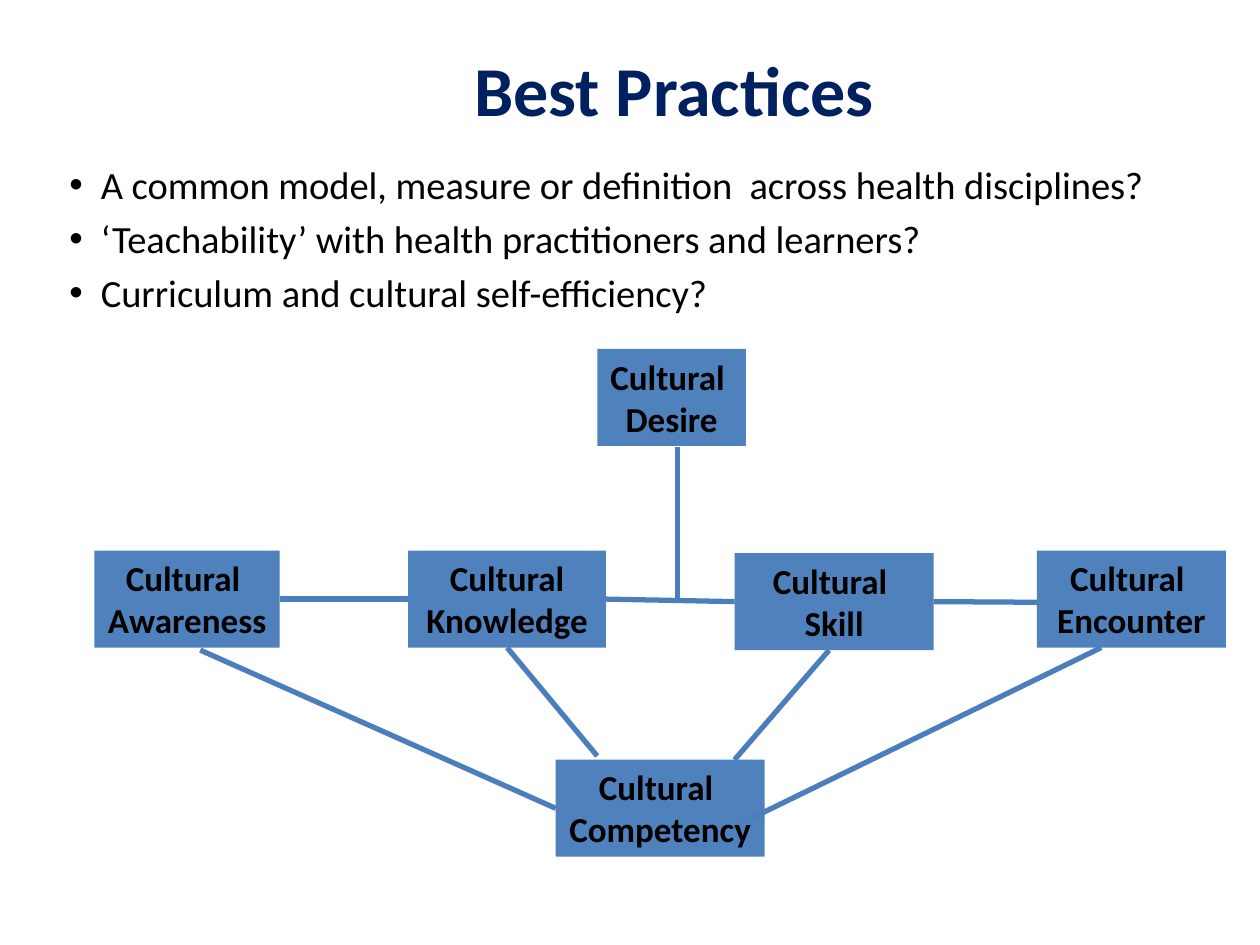
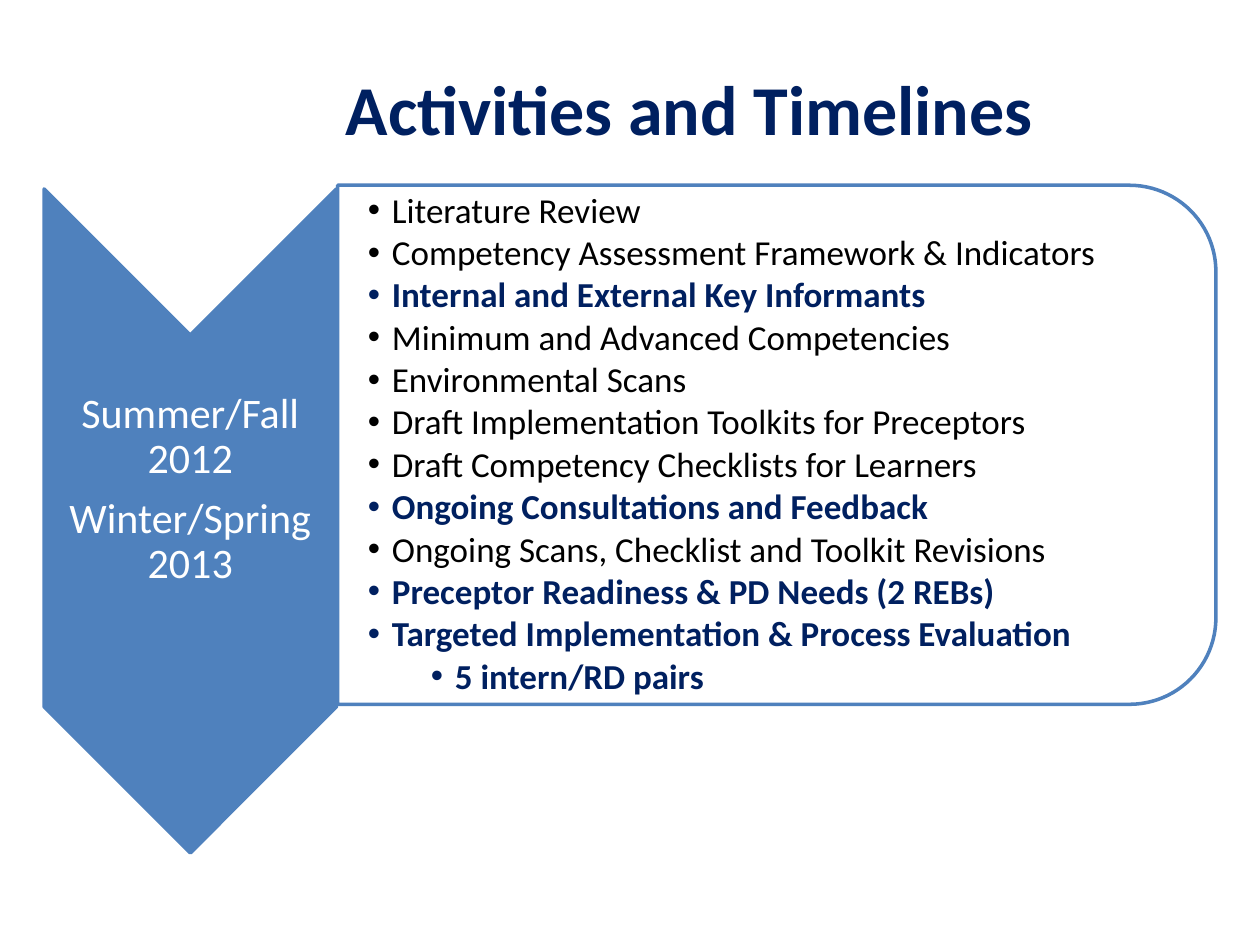
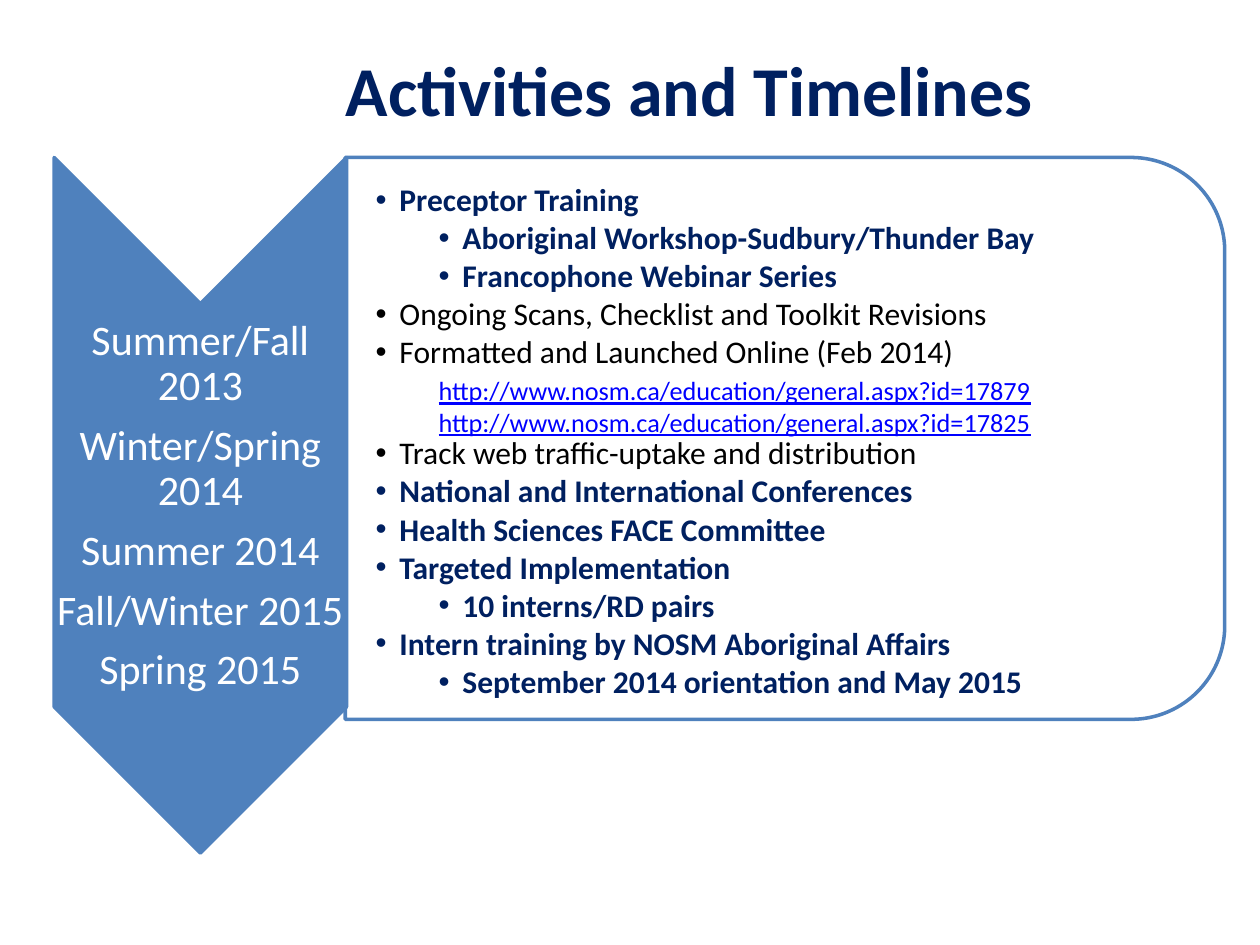
from dataclasses import dataclass

from pptx import Presentation
from pptx import util as u
from pptx.dml.color import RGBColor
from pptx.enum import shapes, text
from pptx.oxml.ns import qn
from lxml import etree

PX = 9144  # EMU in one px, 100 px to the inch


@dataclass(frozen=True)
class Theme:
    font: str = "Calibri"
    navy: str = "002060"
    black: str = "000000"
    white: str = "FFFFFF"
    blue: str = "4F81BD"
    line: str = "4B7EBC"
    link: str = "0000FF"
    title_size: int = 40
    arrow_size: int = 24
    question_size: int = 22
    box_size: int = 20
    link_size: int = 15


T = Theme()

# Looks of list items: font format, and text indent in px (no hang means no bullet)
ITEM_LOOKS = {
    "plain": (dict(color=T.black), 19, 19),
    "key": (dict(color=T.navy, bold=True), 19, 19),
    "sub": (dict(color=T.navy, bold=True), 69, 19),
    "link": (dict(color=T.link, underline=True, size=T.link_size), 50, 0),
    "question": (dict(color=T.black), 25, 25),
}


def emu(*lengths):
    return [round(n * PX) for n in lengths]


def set_all(target, formats):
    for name, value in formats.items():
        setattr(target, name, value)


class Deck:
    def __init__(self):
        self.prs = Presentation()
        self.prs.slide_width, self.prs.slide_height = emu(1000, 750)
        self.s = None

    def slide(self, title, at):
        self.s = self.prs.slides.add_slide(self.prs.slide_layouts[1])
        sp = self.s.shapes.title
        self.place(sp, at)
        self.frame(sp, anchor=text.MSO_ANCHOR.MIDDLE)
        self.fill_in(sp.text_frame.paragraphs[0], title,
                     dict(size=T.title_size, color=T.navy, bold=True),
                     alignment=text.PP_ALIGN.CENTER)

    def place(self, sp, at):
        sp.left, sp.top, sp.width, sp.height = emu(*at)

    def frame(self, sp, insets=(10, 5, 10, 5), anchor=text.MSO_ANCHOR.TOP, wrap=True):
        tf = sp.text_frame
        sides = ("margin_left", "margin_top", "margin_right", "margin_bottom")
        set_all(tf, dict(zip(sides, emu(*insets))))
        set_all(tf, dict(word_wrap=wrap, vertical_anchor=anchor,
                         auto_size=text.MSO_AUTO_SIZE.NONE))
        return tf

    def fill_in(self, p, words, font, **layout):
        set_all(p, layout)
        r = p.add_run()
        r.text = words
        font = {"name": T.font, "bold": False, **font}
        r.font.color.rgb = RGBColor.from_string(font.pop("color"))
        font["size"] = u.Pt(font["size"])
        set_all(r.font, font)

    def paragraphs(self, tf, count):
        return [tf.paragraphs[0]] + [tf.add_paragraph() for _ in range(count - 1)]

    def bullets(self, items, at, size, leading=1.0, before=0, after=0, **frame):
        sp = self.s.placeholders[1]
        self.place(sp, at)
        tf = self.frame(sp, **frame)
        for i, (p, (look, words)) in enumerate(zip(self.paragraphs(tf, len(items)), items)):
            font, indent, hang = ITEM_LOOKS[look]
            pPr = p._p.get_or_add_pPr()
            pPr.set("marL", str(indent * PX))
            pPr.set("indent", str(-hang * PX))
            if hang:
                etree.SubElement(pPr, qn("a:buChar"), char="•")
            else:
                etree.SubElement(pPr, qn("a:buNone"))
            self.fill_in(p, words, {"size": size, **font},
                         line_spacing=leading if hang else 1.0,
                         space_before=u.Pt(before if i else 0),
                         space_after=u.Pt(after if hang else 0))
        self.s.shapes._spTree.append(sp._element)  # bring in front of the panel

    def shape(self, kind, at, fill, line=None):
        sp = self.s.shapes.add_shape(kind, *emu(*at))
        sp.shadow.inherit = False
        sp.fill.solid()
        sp.fill.fore_color.rgb = RGBColor.from_string(fill)
        if line:
            sp.line.color.rgb = RGBColor.from_string(line)
            sp.line.width = u.Pt(2)
        else:
            sp.line.fill.background()
        return sp

    def turned(self, kind, at, fill):
        """Shape turned a quarter clockwise that fills the given area."""
        x, y, w, h = at
        sp = self.shape(kind, (x + (w - h) / 2, y + (h - w) / 2, h, w), fill, T.blue)
        sp.rotation = 90
        return sp

    def box(self, lines, at):
        sp = self.shape(shapes.MSO_SHAPE.RECTANGLE, at, T.blue)
        tf = self.frame(sp, wrap=len(lines) == 1)
        for p, words in zip(self.paragraphs(tf, len(lines)), lines):
            self.fill_in(p, words, dict(size=T.box_size, color=T.black, bold=True),
                         alignment=text.PP_ALIGN.CENTER)
        return sp

    def connect(self, start, end):
        """Each end is an (x, y) point or a (shape, side) pair."""
        points = [tip if isinstance(tip[0], int) else (0, 0) for tip in (start, end)]
        cn = self.s.shapes.add_connector(shapes.MSO_CONNECTOR.STRAIGHT,
                                         *emu(*points[0], *points[1]))
        for join, tip in ((cn.begin_connect, start), (cn.end_connect, end)):
            if not isinstance(tip[0], int):
                join(*tip)
        cn.line.color.rgb = RGBColor.from_string(T.line)
        cn.line.width = u.Pt(3)
        etree.SubElement(cn._element.spPr, qn("a:effectLst"))

    def caption(self, lines, at):
        tf = self.frame(self.s.shapes.add_textbox(*emu(*at)), (2, 2, 2, 2),
                        text.MSO_ANCHOR.MIDDLE)
        for p, words in zip(self.paragraphs(tf, len(lines)), lines):
            self.fill_in(p, words, dict(size=T.arrow_size, color=T.white),
                         alignment=text.PP_ALIGN.CENTER, line_spacing=0.9,
                         space_after=u.Pt(8.2))

    def timeline(self, title_at, panel, list_top, items, size, arrow, periods, periods_at):
        self.slide("Activities and Timelines", title_at)
        # Panel with its list
        sp = self.turned(shapes.MSO_SHAPE.ROUND_2_SAME_RECTANGLE, panel, T.white)
        colour = sp._element.spPr.find(qn("a:solidFill"))[0]
        etree.SubElement(colour, qn("a:alpha"), val="90000")
        x, _, _, h = panel
        self.bullets(items, (x + 10, list_top, 684, h), size, leading=0.9,
                     after=round(size * 0.13, 1), insets=(14, 1, 1, 1),
                     anchor=text.MSO_ANCHOR.MIDDLE)
        # Arrow with its periods
        self.turned(shapes.MSO_SHAPE.CHEVRON, arrow, T.blue)
        self.caption(periods, (arrow[0], periods_at[0], arrow[2], periods_at[1]))


def best_practices(deck):
    deck.slide("Best Practices", (145, 36, 780, 69))
    deck.bullets([
        ("question", "A common model, measure or definition  across health disciplines?"),
        ("question", "‘Teachability’ with health practitioners and learners?"),
        ("question", "Curriculum and cultural self-efficiency?"),
    ], (45, 123, 955, 194), T.question_size, before=4.4)

    # Boxes of the model
    deck.box(["Cultural ", "Desire"], (474, 277, 118, 77))
    knowledge = deck.box(["Cultural Knowledge"], (324, 437, 157, 77))
    skill = deck.box(["Cultural ", "Skill"], (583, 439, 158, 77))
    deck.box(["Cultural ", "Encounter"], (823, 437, 150, 77))
    competency = deck.box(["Cultural ", "Competency"], (441, 603, 166, 77))
    awareness = deck.box(["Cultural ", "Awareness"], (75, 437, 147, 77))

    # Links between them
    for start, end in [
        ((538, 355), (538, 477)),
        ((knowledge, 1), (awareness, 3)),
        ((skill, 1), (knowledge, 3)),
        ((823, 478), (skill, 3)),
        ((knowledge, 2), (474, 600)),
        ((658, 516), (583, 603)),
        ((874, 514), (589, 653)),
        ((159, 516), (competency, 1)),
    ]:
        deck.connect(start, end)


def main():
    deck = Deck()
    best_practices(deck)
    deck.timeline(
        title_at=(189, 23, 716, 125), panel=(268, 147, 697, 412), list_top=147, size=20,
        items=[
            ("plain", "Literature Review"),
            ("plain", "Competency Assessment Framework & Indicators"),
            ("key", "Internal and External Key Informants"),
            ("plain", "Minimum and Advanced Competencies"),
            ("plain", "Environmental Scans"),
            ("plain", "Draft Implementation Toolkits for Preceptors"),
            ("plain", "Draft Competency Checklists for Learners"),
            ("key", "Ongoing Consultations and Feedback"),
            ("plain", "Ongoing Scans, Checklist and Toolkit Revisions"),
            ("key", "Preceptor Readiness & PD Needs (2 REBs)"),
            ("key", "Targeted Implementation & Process Evaluation"),
            ("sub", "5 intern/RD pairs"),
        ],
        arrow=(35, 150, 232, 527), periods_at=(300, 178),
        periods=["Summer/Fall 2012", "Winter/Spring 2013"])
    deck.timeline(
        title_at=(189, 20, 716, 101), panel=(274, 125, 698, 446), list_top=128, size=18,
        items=[
            ("key", "Preceptor Training"),
            ("sub", "Aboriginal Workshop-Sudbury/Thunder Bay"),
            ("sub", "Francophone Webinar Series"),
            ("plain", "Ongoing Scans, Checklist and Toolkit Revisions"),
            ("plain", "Formatted and Launched Online (Feb 2014)"),
            ("link", "http://www.nosm.ca/education/general.aspx?id=17879"),
            ("link", "http://www.nosm.ca/education/general.aspx?id=17825"),
            ("plain", "Track web traffic-uptake and distribution"),
            ("key", "National and International Conferences"),
            ("key", "Health Sciences FACE Committee"),
            ("key", "Targeted Implementation"),
            ("sub", "10 interns/RD pairs"),
            ("key", "Intern training by NOSM Aboriginal Affairs"),
            ("sub", "September 2014 orientation and May 2015"),
        ],
        arrow=(43, 125, 232, 552), periods_at=(247, 310),
        periods=["Summer/Fall 2013", "Winter/Spring 2014", "Summer 2014",
                 "Fall/Winter 2015", "Spring 2015"])
    deck.prs.save("out.pptx")


if __name__ == "__main__":
    main()
